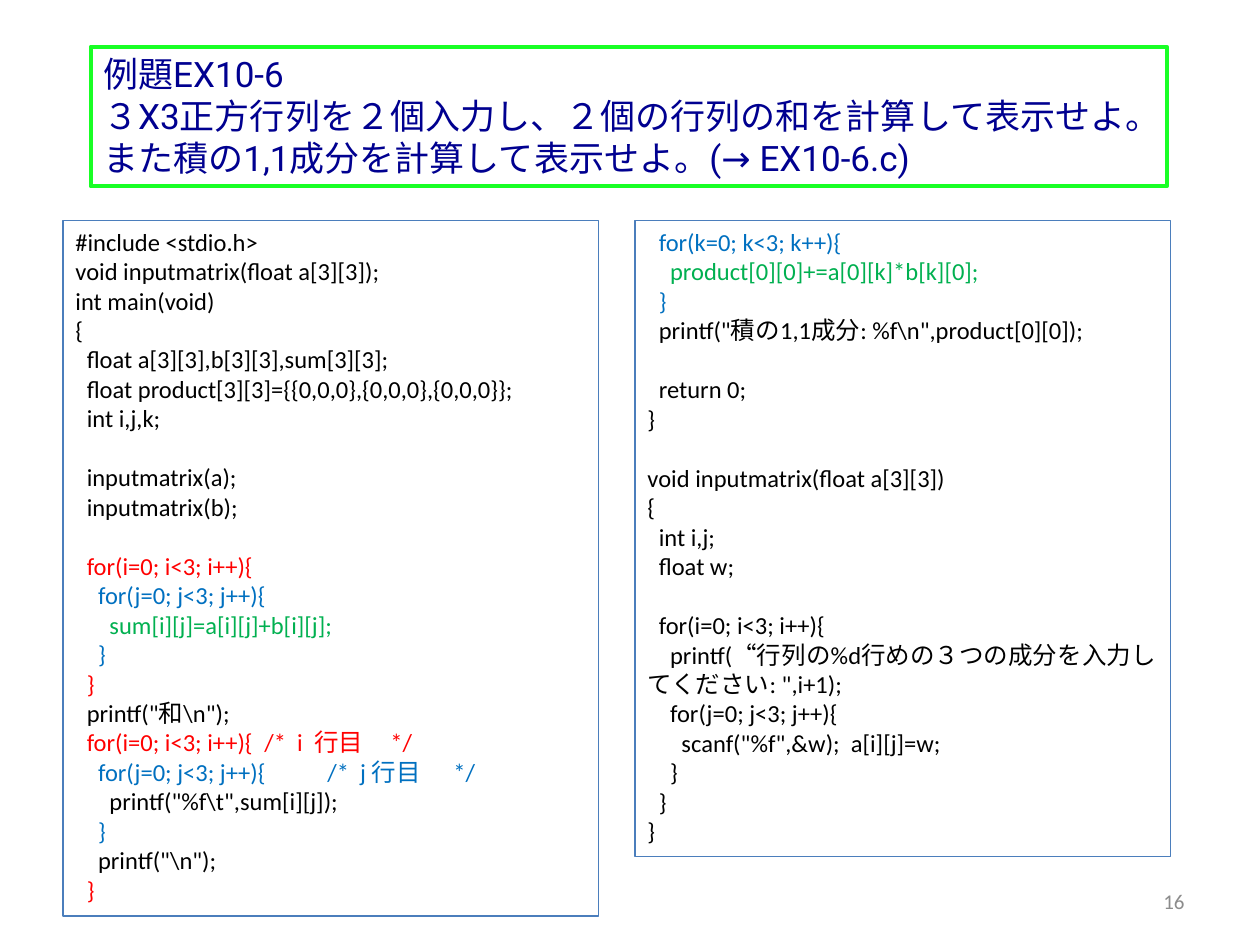
"""Build a slide with a matrix exercise and its C program in two columns."""
import pptx
import pptx.dml.color
import pptx.enum.text
import pptx.util

Inches = pptx.util.Inches
Pt = pptx.util.Pt
Align = pptx.enum.text.PP_ALIGN
Anchor = pptx.enum.text.MSO_ANCHOR
Fit = pptx.enum.text.MSO_AUTO_SIZE

HUES = {
    "navy": "000090", "lime": "19FF25", "edge": "4B7EBC", "gray": "8C8C8C",
    "black": "000000", "red": "FF0000", "blue": "0070C0", "green": "00B050",
}
GAP = None
TASK = [
    (0, "navy", "例題EX10-6"),
    (0, "navy", "３X3正方行列を２個入力し、２個の行列の和を計算して表示せよ。"
                "また積の1,1成分を計算して表示せよ。(→ EX10-6.c)"),
]
MAIN = [
    (0, "black", "#include <stdio.h>"),
    (0, "black", "void inputmatrix(float a[3][3]);"),
    (0, "black", "int main(void)"),
    (0, "black", "{"),
    (1, "black", "float a[3][3],b[3][3],sum[3][3];"),
    (1, "black", "float product[3][3]={{0,0,0},{0,0,0},{0,0,0}};"),
    (1, "black", "int i,j,k;"),
    GAP,
    (1, "black", "inputmatrix(a);"),
    (1, "black", "inputmatrix(b);"),
    GAP,
    (1, "red", "for(i=0; i<3; i++){"),
    (2, "blue", "for(j=0; j<3; j++){"),
    (3, "green", "sum[i][j]=a[i][j]+b[i][j];"),
    (2, "blue", "}"),
    (1, "red", "}"),
    (1, "black", r'printf("和\n");'),
    (1, "red", "for(i=0; i<3; i++){\t/*  i  行目\t*/"),
    (2, "blue", "for(j=0; j<3; j++){\t/*  j 行目\t*/"),
    (3, "black", r'printf("%f\t",sum[i][j]);'),
    (2, "blue", "}"),
    (2, "black", r'printf("\n");'),
    (1, "red", "}"),
]
REST = [
    (1, "blue", "for(k=0; k<3; k++){"),
    (2, "green", "product[0][0]+=a[0][k]*b[k][0];"),
    (1, "blue", "}"),
    (1, "black", r'printf("積の1,1成分: %f\n",product[0][0]);'),
    GAP,
    (1, "black", "return 0;"),
    (0, "black", "}"),
    GAP,
    (0, "black", "void inputmatrix(float a[3][3])"),
    (0, "black", "{"),
    (1, "black", "int i,j;"),
    (1, "black", "float w;"),
    GAP,
    (1, "black", "for(i=0; i<3; i++){"),
    (2, "black", 'printf(“行列の%d行めの３つの成分を入力してください: ",i+1);'),
    (2, "black", "for(j=0; j<3; j++){"),
    (3, "black", 'scanf("%f",&w);  a[i][j]=w;'),
    (2, "black", "}"),
    (1, "black", "}"),
    (0, "black", "}"),
]
STEP = 0.09
STOPS = (1.76, 2.74)
LEAD = 17


def tint(name):
    return pptx.dml.color.RGBColor.from_string(HUES[name])


def indent(para, depth):
    props = para._p.get_or_add_pPr()
    props.set("marL", "0")
    props.set("indent", str(Inches(depth * STEP)))


def add_stops(para):
    props = para._p.get_or_add_pPr()
    tabs = props.makeelement(pptx.oxml.ns.qn("a:tabLst"), {})
    for stop in STOPS:
        spot = {"pos": str(Inches(stop)), "algn": "l"}
        tabs.append(tabs.makeelement(pptx.oxml.ns.qn("a:tab"), spot))
    props.append(tabs)


def add_text(slide, lines, area, size=14, font="Calibri", edge=None, width=0.75,
             align=Align.LEFT, anchor=Anchor.TOP, fit=Fit.SHAPE_TO_FIT_TEXT):
    box = slide.shapes.add_textbox(*map(Inches, area))
    if edge:
        box.line.color.rgb = tint(edge)
        box.line.width = Pt(width)
    frame = box.text_frame
    frame.word_wrap = True
    frame.auto_size = fit
    frame.vertical_anchor = anchor
    for num, line in enumerate(lines):
        if line is GAP:
            continue
        depth, hue, text = line
        para = frame.add_paragraph() if num else frame.paragraphs[0]
        para.alignment = align
        if num and lines[num - 1] is GAP:
            para.space_before = Pt(LEAD)
        if depth:
            indent(para, depth)
        if "\t" in text:
            add_stops(para)
        run = para.add_run()
        run.text = text
        run.font.size = Pt(size)
        run.font.name = font
        run.font.color.rgb = tint(hue)


def main():
    deck = pptx.Presentation()
    deck.slide_width, deck.slide_height = Inches(10), Inches(7.5)
    slide = deck.slides.add_slide(deck.slide_layouts[6])
    add_text(slide, [(0, "gray", "16")], (7.17, 6.95, 2.33, 0.4), size=12,
             align=Align.RIGHT, anchor=Anchor.MIDDLE, fit=Fit.NONE)
    add_text(slide, TASK, (0.72, 0.37, 8.54, 1.11), size=20, font="Roboto",
             edge="lime", width=2.25)
    for left, high, code in ((0.5, 5.52, MAIN), (5.04, 5.05, REST)):
        add_text(slide, code, (left, 1.75, 4.25, high), edge="edge")
    deck.save("out.pptx")


if __name__ == "__main__":
    main()
